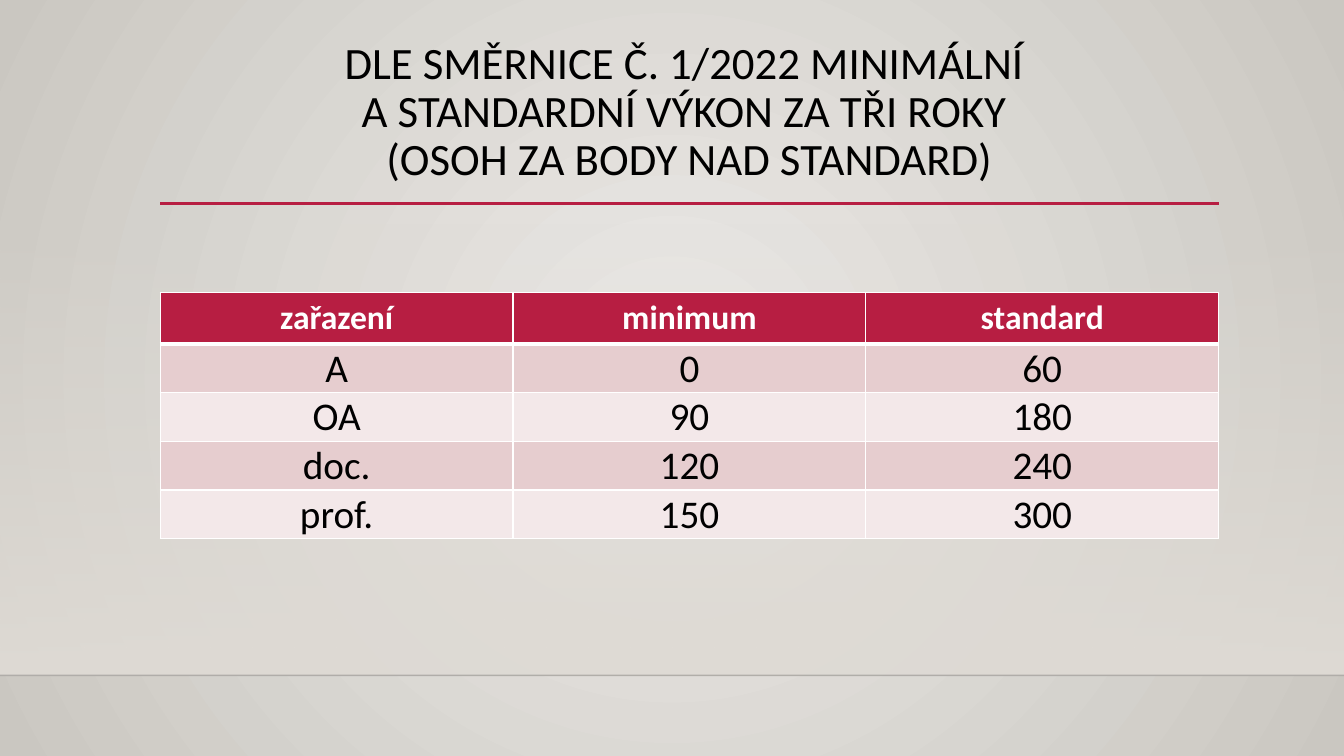
from lxml import etree
from pptx import Presentation
from pptx.dml.color import RGBColor
from pptx.enum.shapes import MSO_CONNECTOR, MSO_SHAPE
from pptx.enum.text import MSO_ANCHOR, PP_ALIGN
from pptx.oxml.ns import qn
from pptx.util import Pt

STRAIGHT = MSO_CONNECTOR.STRAIGHT
RECTANGLE = MSO_SHAPE.RECTANGLE
CENTER = PP_ALIGN.CENTER
TOP, BOTTOM = MSO_ANCHOR.TOP, MSO_ANCHOR.BOTTOM

COLORS = {
    "center": "ECEAE7", "edge": "CAC7C1", "wall": "DFDBD5",
    "accent": "B71E42", "odd": "E6CDCF", "even": "F3E8E9",
    "white": "FFFFFF", "black": "000000", "floor": "000001",
}
FONT = "Calibri"
WIDTH, HEIGHT = 960, 540
LEFT, CONTENT_WIDTH = 114.5, 756
FLOOR_Y = 482.4
HEADER_HEIGHT, ROW_HEIGHT = 36.5, 34.8

TITLE = ("DLE SMĚRNICE Č. 1/2022 MINIMÁLNÍ \v"
         "A STANDARDNÍ VÝKON ZA TŘI ROKY \v"
         "(OSOH ZA BODY NAD STANDARD)")
ROWS = [
    ("zařazení", "minimum", "standard"),
    ("A", "0", "60"),
    ("OA", "90", "180"),
    ("doc.", "120", "240"),
    ("prof.", "150", "300"),
]


def rgb(name):
    return RGBColor.from_string(COLORS[name])


def set_alpha(color_element, percent):
    etree.SubElement(color_element, qn("a:alpha")).set("val", str(percent * 1000))


def set_gradient(fill, first, last):
    fill.gradient()
    for stop, name, position in zip(fill.gradient_stops, (first, last), (0, 1)):
        stop.color.rgb = rgb(name)
        stop.position = position


def paint_background(page):
    set_gradient(page.background.fill, "center", "edge")
    gradient = page.element.find(".//" + qn("a:gradFill"))
    gradient.remove(gradient.find(qn("a:lin")))
    circle = etree.SubElement(gradient, qn("a:path"), {"path": "circle"})
    sides = dict.fromkeys("ltrb", "50000")
    etree.SubElement(circle, qn("a:fillToRect"), sides)


def add_wall(page, top):
    wall = page.shapes.add_shape(RECTANGLE, 0, Pt(top), Pt(WIDTH), Pt(FLOOR_Y - top))
    wall.shadow.inherit = False
    wall.line.fill.background()
    set_gradient(wall.fill, "wall", "wall")
    wall.fill.gradient_angle = 270
    set_alpha(wall.element.find(".//" + qn("a:srgbClr")), 0)


def add_rule(page, left, right, y, color, weight):
    rule = page.shapes.add_connector(STRAIGHT, Pt(left), Pt(y), Pt(right), Pt(y))
    rule.line.color.rgb = rgb(color)
    rule.line.width = Pt(weight)
    etree.SubElement(rule.element.spPr, qn("a:effectLst"))
    return rule


def write_text(frame, text, size, color, bold=False):
    para = frame.paragraphs[0]
    para.text = text
    para.alignment = CENTER
    para.font.name = FONT
    para.font.size = Pt(size)
    para.font.bold = bold
    para.font.color.rgb = rgb(color)
    return para


def add_title(page):
    box = page.shapes.add_textbox(Pt(LEFT), Pt(23.8), Pt(CONTENT_WIDTH), Pt(121.6))
    frame = box.text_frame
    frame.word_wrap = True
    frame.vertical_anchor = TOP
    frame.margin_top = Pt(5)
    write_text(frame, TITLE, 32, "black").line_spacing = 0.9


def set_borders(cell, top, bottom):
    weights = {"a:lnL": 1, "a:lnR": 1, "a:lnT": top, "a:lnB": bottom}
    properties = cell._tc.get_or_add_tcPr()
    for index, (tag, weight) in enumerate(weights.items()):
        border = etree.Element(qn(tag), {"w": str(Pt(weight))})
        fill = etree.SubElement(border, qn("a:solidFill"))
        etree.SubElement(fill, qn("a:srgbClr"), {"val": COLORS["white"]})
        properties.insert(index, border)


def fill_cell(cell, text, row):
    is_header = row == 0
    cell.fill.solid()
    if is_header:
        cell.fill.fore_color.rgb = rgb("accent")
        write_text(cell.text_frame, text, 24, "white", bold=True)
    else:
        cell.fill.fore_color.rgb = rgb("odd" if row % 2 else "even")
        write_text(cell.text_frame, text, 28, "black")
        cell.vertical_anchor = BOTTOM
        cell.margin_left = cell.margin_right = cell.margin_top = Pt(0.7)
        cell.margin_bottom = 0
    set_borders(cell, top=3 if row == 1 else 1, bottom=3 if is_header else 1)


def add_score_table(page):
    columns = len(ROWS[0])
    height = HEADER_HEIGHT + ROW_HEIGHT * (len(ROWS) - 1)
    table = page.shapes.add_table(len(ROWS), columns, Pt(LEFT), Pt(209.2),
                                  Pt(CONTENT_WIDTH), Pt(height)).table
    for row, texts in enumerate(ROWS):
        table.rows[row].height = Pt(ROW_HEIGHT if row else HEADER_HEIGHT)
        for column, text in enumerate(texts):
            fill_cell(table.cell(row, column), text, row)


def main():
    deck = Presentation()
    deck.slide_width, deck.slide_height = Pt(WIDTH), Pt(HEIGHT)
    page = deck.slides.add_slide(deck.slide_layouts[6])

    # Backdrop: wall fading into the floor line
    paint_background(page)
    add_wall(page, 159)
    floor = add_rule(page, 0, WIDTH, FLOOR_Y, "floor", 1)
    set_alpha(floor.element.find(".//" + qn("a:srgbClr")), 20)

    # Title and its underline
    add_rule(page, LEFT, LEFT + CONTENT_WIDTH, 145.4, "accent", 2.5)
    add_title(page)

    # Minimum and standard scores
    add_score_table(page)
    deck.save("out.pptx")


if __name__ == "__main__":
    main()
